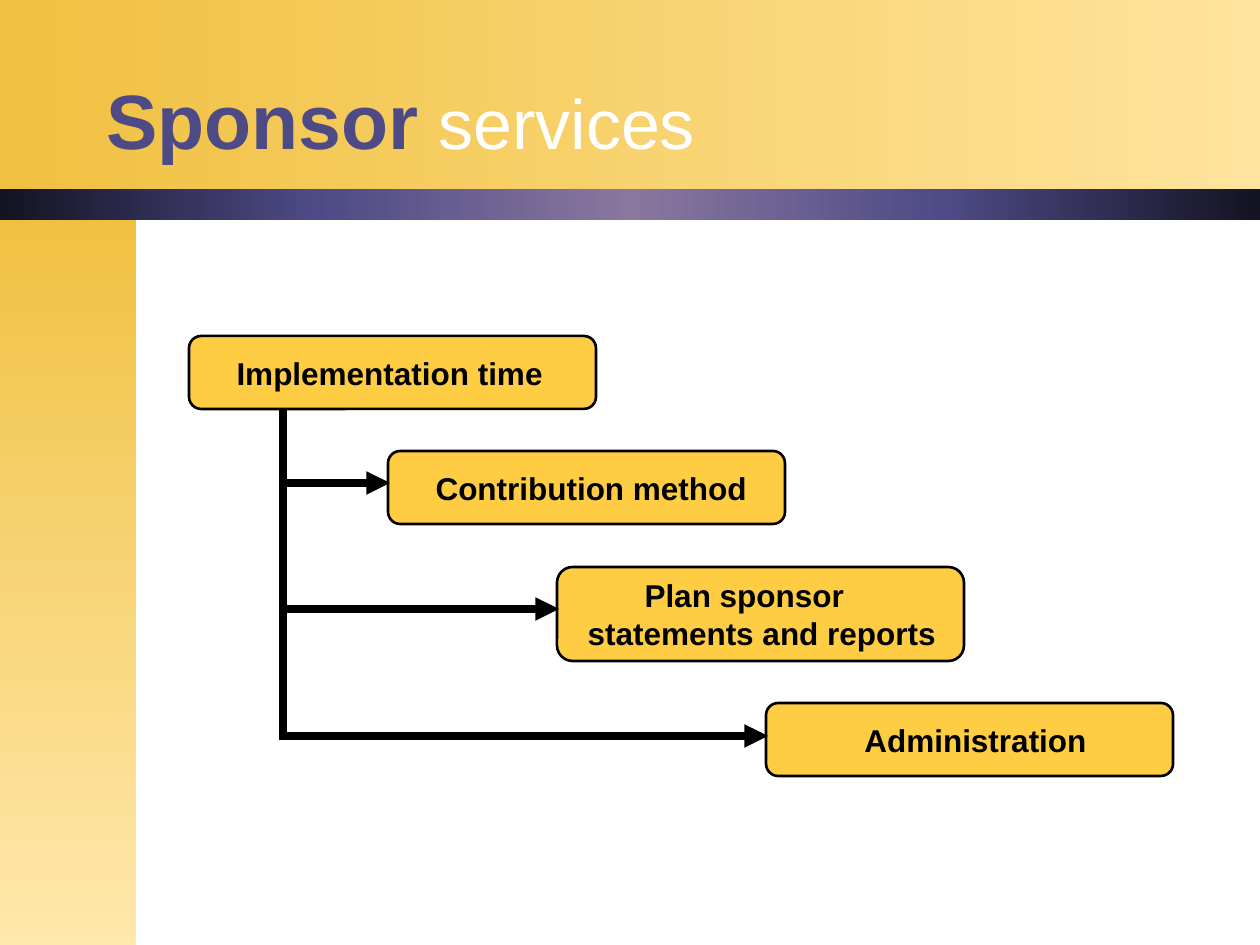
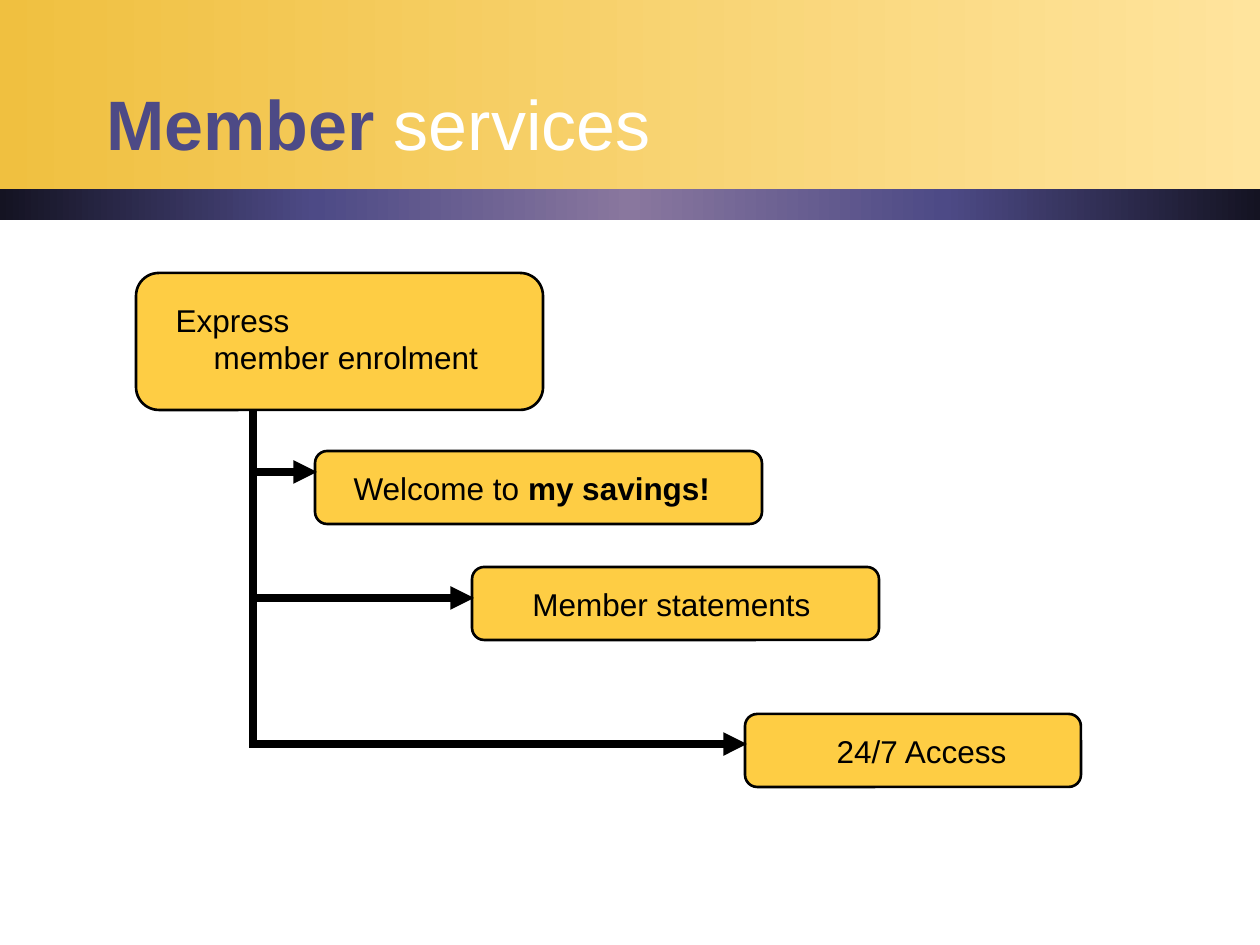
from dataclasses import dataclass

from lxml import etree
from pptx import Presentation
from pptx import util as u
from pptx.dml.color import RGBColor
from pptx.enum import shapes, text
from pptx.oxml import ns

PX = 914400 / 126  # EMU in one px
WIDTH, HEIGHT = 1260, 945
FONT = "Arial"

GOLD = RGBColor(0xF0, 0xC0, 0x40)
PALE_GOLD = RGBColor(0xFF, 0xE4, 0x9D)
CREAM = RGBColor(0xFF, 0xE8, 0xAC)
INDIGO = RGBColor(0x4D, 0x4A, 0x86)
MAUVE = RGBColor(0x89, 0x77, 0x9E)
NIGHT = RGBColor(0x14, 0x13, 0x22)
AMBER = RGBColor(0xFE, 0xCD, 0x44)
WHITE = RGBColor(0xFF, 0xFF, 0xFF)
BLACK = RGBColor(0, 0, 0)

HEADER = (0, 0, WIDTH, 189)
STRIP = (0, 189, WIDTH, 31)
SIDEBAR = (0, 210, 136, 735)
TITLE = (94, 0, 1071, 171)
ARROW_OVERLAP = 2  # arrowheads reach just inside the step they point to


@dataclass
class Step:
    box: tuple            # left, top, width, height
    lines: list           # each line is a list of (words, bold)
    margins: tuple        # left, right, bottom
    centred: bool = False
    hang: int = 0         # left shift of the lines after the first
    arrow_y: int = 0


def px(length):
    return u.Emu(round(length * PX))


def add_runs(paragraph, runs):
    for words, size, bold, color in runs:
        run = paragraph.add_run()
        run.text = words
        run.font.name = FONT
        run.font.size = u.Pt(size)
        run.font.bold = bold
        run.font.color.rgb = color


def add_band(slide, box, colors, angle=0):
    """Rectangle with evenly spaced gradient colours."""
    band = slide.shapes.add_shape(shapes.MSO_SHAPE.RECTANGLE, *map(px, box))
    band.shadow.inherit = False
    band.line.fill.background()
    band.fill.gradient()
    band.fill.gradient_angle = angle
    stops = band._element.spPr.find(".//" + ns.qn("a:gsLst"))
    stops.clear()
    for i, color in enumerate(colors):
        position = str(round(100000 * i / (len(colors) - 1)))
        stop = etree.SubElement(stops, ns.qn("a:gs"), pos=position)
        etree.SubElement(stop, ns.qn("a:srgbClr"), val=str(color))


def add_title(slide, box, subject, subject_size):
    frame = slide.shapes.add_textbox(*map(px, box)).text_frame
    frame.word_wrap = True
    frame.vertical_anchor = text.MSO_ANCHOR.BOTTOM
    add_runs(frame.paragraphs[0], [(subject, subject_size, True, INDIGO),
                                   (" services", 40, False, WHITE)])


def add_step(slide, step):
    card = slide.shapes.add_shape(
        shapes.MSO_SHAPE.FLOWCHART_ALTERNATE_PROCESS, *map(px, step.box))
    card.shadow.inherit = False
    card.fill.solid()
    card.fill.fore_color.rgb = AMBER
    card.line.color.rgb = BLACK
    card.line.width = u.Pt(1.5)

    frame = card.text_frame
    frame.word_wrap = True
    frame.vertical_anchor = text.MSO_ANCHOR.MIDDLE
    left, right, bottom = step.margins
    frame.margin_left, frame.margin_right = px(left), px(right)
    frame.margin_top, frame.margin_bottom = 0, px(bottom)

    label = frame.paragraphs[0]
    label.alignment = text.PP_ALIGN.CENTER if step.centred else text.PP_ALIGN.LEFT
    if step.hang:
        properties = label._p.get_or_add_pPr()
        properties.set("marL", str(px(max(step.hang, 0))))
        properties.set("indent", str(px(-step.hang)))
    for i, line in enumerate(step.lines):
        if i:
            label.add_line_break()
        add_runs(label, [(words, 18, bold, BLACK) for words, bold in line])


def add_line(slide, start, end, arrow=False):
    line = slide.shapes.add_connector(
        shapes.MSO_CONNECTOR.STRAIGHT, *map(px, start + end))
    line.line.color.rgb = BLACK
    line.line.width = u.Pt(4.5)
    if arrow:
        etree.SubElement(line.line._get_or_add_ln(), ns.qn("a:tailEnd"), type="triangle")
    etree.SubElement(line._element.spPr, ns.qn("a:effectLst"))


def add_cascade(slide, trunk_x, steps):
    """First step on top, a trunk below it and an arrow to each later step."""
    for step in steps:
        add_step(slide, step)
    _, top, _, height = steps[0].box
    add_line(slide, (trunk_x, top + height), (trunk_x, steps[-1].arrow_y + 4))
    for step in steps[1:]:
        add_line(slide, (trunk_x, step.arrow_y),
                 (step.box[0] + ARROW_OVERLAP, step.arrow_y), arrow=True)


def add_services_slide(deck, subject, subject_size, trunk_x, steps, sidebar=False):
    slide = deck.slides.add_slide(deck.slide_layouts[6])
    add_band(slide, HEADER, [GOLD, PALE_GOLD])
    if sidebar:
        add_band(slide, SIDEBAR, [GOLD, CREAM], angle=270)
    add_band(slide, STRIP, [NIGHT, INDIGO, MAUVE, INDIGO, NIGHT])
    add_title(slide, TITLE, subject, subject_size)
    add_cascade(slide, trunk_x, steps)


SPONSOR_STEPS = [
    Step((189, 336, 407, 73), [[("Implementation time", True)]], (44, 0, 0)),
    Step((388, 451, 397, 73), [[("Contribution method", True)]], (44, 0, 0),
         arrow_y=483),
    Step((557, 567, 407, 94),
         [[("Plan sponsor", True)], [("statements and reports", True)]],
         (26, 0, 0), hang=-57, arrow_y=609),
    Step((766, 703, 407, 73), [[("Administration", True)]], (12, 0, 0),
         centred=True, arrow_y=736),
]

MEMBER_STEPS = [
    Step((136, 273, 407, 137),
         [[("Express", False)], [("member enrolment", False)]],
         (33, 0, 6), hang=38),
    Step((315, 451, 447, 73),
         [[("Welcome to", False), (" my savings!", True)]],
         (35, 0, 0), arrow_y=472),
    Step((472, 567, 407, 73), [[("Member statements", False)]], (0, 8, 0),
         centred=True, arrow_y=598),
    Step((745, 714, 336, 73), [[("24/7 Access", False)]], (17, 0, 0),
         centred=True, arrow_y=744),
]


def main():
    deck = Presentation()
    deck.slide_width, deck.slide_height = px(WIDTH), px(HEIGHT)
    add_services_slide(deck, "Sponsor", 44, 283, SPONSOR_STEPS, sidebar=True)
    add_services_slide(deck, "Member", 40, 253, MEMBER_STEPS)
    deck.save("out.pptx")


if __name__ == "__main__":
    main()
